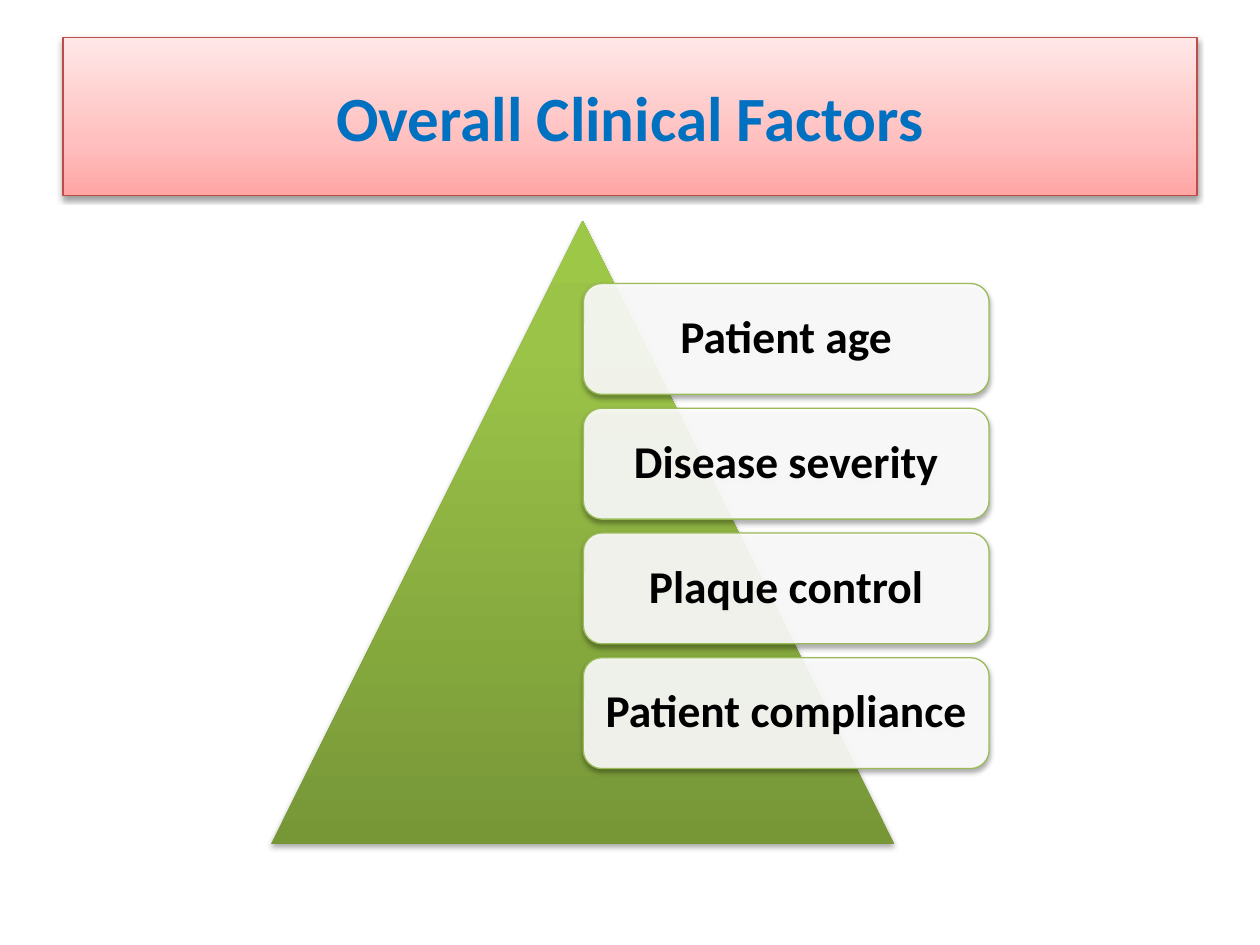
from lxml import etree
from pptx import Presentation
from pptx import util as u
from pptx.dml.color import RGBColor
from pptx.enum import shapes, text
from pptx.oxml.ns import qn

BLUE = RGBColor(0x00, 0x70, 0xC0)
BLACK = RGBColor(0x00, 0x00, 0x00)
WHITE = RGBColor(0xFF, 0xFF, 0xFF)
RED = RGBColor(0xBF, 0x4C, 0x48)
GREEN = RGBColor(0x9B, 0xBB, 0x59)
# Gradient stops run from the bottom edge up: (percent, colour)
PINK_STOPS = [(0, RGBColor(0xFF, 0xA6, 0xA5)), (35, RGBColor(0xFF, 0xC0, 0xBF)),
              (100, RGBColor(0xFF, 0xE7, 0xE7))]
GREEN_STOPS = [(0, RGBColor(0x77, 0x97, 0x37)), (80, RGBColor(0x9B, 0xC3, 0x48)),
               (100, RGBColor(0x9D, 0xC7, 0x46))]

FACTORS = ["Patient age", "Disease severity", "Plaque control", "Patient compliance"]
BOX_LEFT, BOX_TOP, BOX_WIDTH, BOX_HEIGHT = 4.63, 2.25, 3.22, 0.88
BOX_PITCH = 0.99


class SlideBuilder:
    font = "Calibri"

    def __init__(self, prs):
        self.slide = prs.slides.add_slide(prs.slide_layouts[5])

    def add_shape(self, kind, *box):
        return self.slide.shapes.add_shape(kind, *map(u.Inches, box))

    def set_gradient(self, sp, stops):
        sp.fill.gradient()
        sp.fill.gradient_angle = 90
        stop_list = sp.element.spPr.find(".//" + qn("a:gsLst"))
        for old in list(stop_list):
            stop_list.remove(old)
        for percent, color in stops:
            stop = etree.SubElement(stop_list, qn("a:gs"), pos=str(percent * 1000))
            etree.SubElement(stop, qn("a:srgbClr"), val=str(color))

    def set_line(self, sp, color):
        sp.line.color.rgb = color
        sp.line.width = u.Pt(0.75)

    def set_shadow(self, sp, opacity, distance):
        sp.shadow.inherit = False
        effects = sp.element.spPr.find(qn("a:effectLst"))
        shadow = etree.SubElement(
            effects, qn("a:outerShdw"), blurRad=str(u.Pt(3.1)),
            dist=str(u.Pt(distance)), dir="5400000", rotWithShape="0")
        color = etree.SubElement(shadow, qn("a:srgbClr"), val=str(BLACK))
        etree.SubElement(color, qn("a:alpha"), val=str(opacity * 1000))

    def set_text(self, sp, words, size, color):
        """Write one bold, centred line and return its paragraph."""
        tf = sp.text_frame
        tf.word_wrap = True
        tf.vertical_anchor = text.MSO_ANCHOR.MIDDLE
        p = tf.paragraphs[0]
        p.alignment = text.PP_ALIGN.CENTER
        r = p.add_run()
        r.text = words
        r.font.name = self.font
        r.font.size = u.Pt(size)
        r.font.bold = True
        r.font.color.rgb = color
        return p

    def title(self, words):
        sp = self.slide.shapes.title
        sp.left, sp.top, sp.width, sp.height = map(u.Inches, (0.5, 0.3, 9, 1.25))
        self.set_gradient(sp, PINK_STOPS)
        self.set_line(sp, RED)
        self.set_shadow(sp, 38, 1.6)
        self.set_text(sp, words, 36, BLUE)

    def pyramid(self, *box):
        sp = self.add_shape(shapes.MSO_SHAPE.ISOSCELES_TRIANGLE, *box)
        self.set_gradient(sp, GREEN_STOPS)
        sp.line.fill.background()
        self.set_shadow(sp, 35, 1.8)

    def factor(self, words, *box):
        sp = self.add_shape(shapes.MSO_SHAPE.ROUNDED_RECTANGLE, *box)
        sp.fill.solid()
        sp.fill.fore_color.rgb = WHITE
        fill_color = sp.element.spPr.find(qn("a:solidFill")).find(qn("a:srgbClr"))
        etree.SubElement(fill_color, qn("a:alpha"), val="90000")
        self.set_line(sp, GREEN)
        self.set_shadow(sp, 35, 1.8)
        tf = sp.text_frame
        tf.margin_left = tf.margin_right = u.Inches(0.07)
        tf.margin_top = tf.margin_bottom = u.Inches(0.07)
        self.set_text(sp, words, 26, BLACK).line_spacing = 0.9


def main():
    prs = Presentation()
    prs.slide_width, prs.slide_height = u.Inches(10), u.Inches(7.5)
    s = SlideBuilder(prs)
    s.title("Overall Clinical Factors")
    s.pyramid(2.15, 1.75, 4.95, 4.95)
    for i, words in enumerate(FACTORS):
        s.factor(words, BOX_LEFT, BOX_TOP + i * BOX_PITCH, BOX_WIDTH, BOX_HEIGHT)
    prs.save("out.pptx")


if __name__ == "__main__":
    main()
